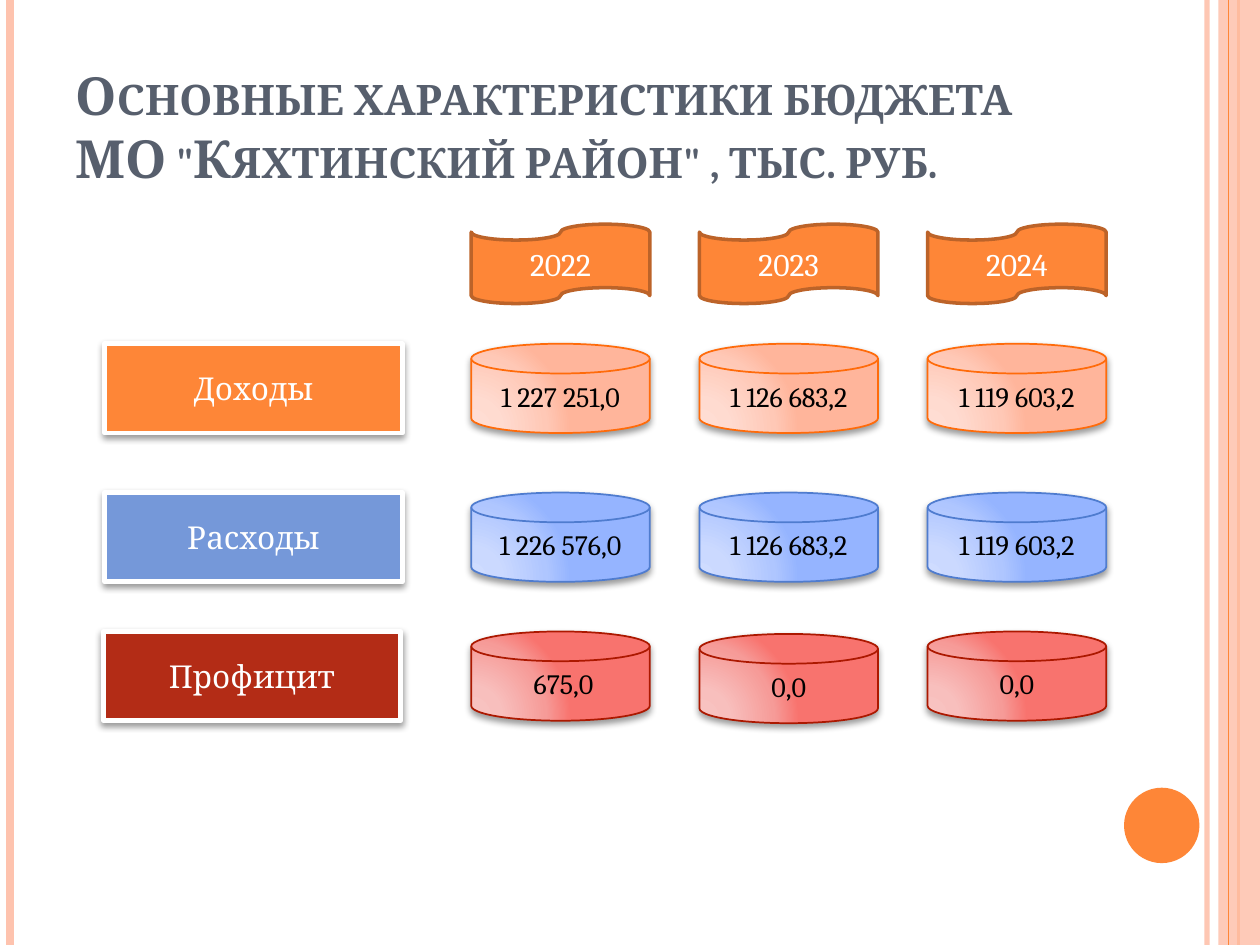
"""Build the budget summary slide of the district."""
from pptx import Presentation, dml, oxml
from pptx import util as u
from pptx.dml import color
from pptx.enum import shapes, text
from pptx.oxml import ns

HUES = {"orange": "FE8637", "blue": "7598D9", "red": "B32C16", "peach": "FEC3AE",
        "brown": "BC6329", "slate": "575F6D", "white": "FFFFFF", "black": "000000"}
YEARS = ["2022", "2023", "2024"]
ROWS = [
    ("Доходы", "orange", 2.11, 6.93, "FF6B0A", ["FFDED5", "FFDBD0", "FFC8B6", "FFB59B"],
     [("1 227 251,0", 0), ("1 126 683,2", 0), ("1 119 603,2", 0)]),
    ("Расходы", "blue", 2.11, 9.93, "4F7CCF", ["CFDCFF", "CBD9FF", "AFC6FF", "95B4FF"],
     [("1 226 576,0", 0), ("1 126 683,2", 0), ("1 119 603,2", 0)]),
    ("Профицит", "red", 2.08, 12.73, "AC1800", ["F8C5C3", "F8BFBD", "F69B98", "F8736E"],
     [(" 675,0", 0), ("0,0", 0.05), ("0,0", 0)]),
]
LEFT, STEP, WIDE, HIGH = 9.5, 4.6, 3.6, 1.8
KIND = shapes.MSO_SHAPE


def tint(name):
    """Return the colour for a name or a hex string."""
    return color.RGBColor.from_string(HUES.get(name, name))


def fade(fill, part):
    """Make a solid fill part opaque, in percent."""
    for hue in fill.iter(ns.qn("a:srgbClr")):
        oxml.xmlchemy.OxmlElement("a:alpha")
        hue.append(oxml.parse_xml(f'<a:alpha {ns.nsdecls("a")} val="{part * 1000}"/>'))


def write(frame, words, size=18, hue="white", bold=False, small=False,
          align=text.PP_ALIGN.CENTER, anchor=text.MSO_ANCHOR.MIDDLE):
    """Put formatted words in a text frame."""
    frame.word_wrap = True
    frame.auto_size = text.MSO_AUTO_SIZE.NONE
    frame.vertical_anchor = anchor
    para = frame.paragraphs[0]
    para.alignment = align
    run = para.add_run()
    run.text = words
    font = run.font
    font.name, font.size, font.bold = "Cambria", u.Pt(size), bold
    font.color.rgb = tint(hue)
    if small:
        run._r.get_or_add_rPr().set("cap", "small")


class Deck:
    """Hold the style and the current slide."""

    def __init__(self):
        """Open a title-only slide."""
        self.show = Presentation()
        self.show.slide_width, self.show.slide_height = u.Cm(25.4), u.Cm(19.05)
        self.slide = self.show.slides.add_slide(self.show.slide_layouts[5])
        self.items = self.slide.shapes

    def title(self, words, x, y, w, h):
        """Place the title above the frame lines."""
        box = self.items.title
        box.left, box.top, box.width, box.height = map(u.Cm, (x, y, w, h))
        write(box.text_frame, words, size=30, hue="slate", bold=True, small=True,
              align=text.PP_ALIGN.LEFT, anchor=text.MSO_ANCHOR.BOTTOM)
        self.items._spTree.append(box._element)

    def rule(self, x, hue, width, part=100):
        """Draw a line down the whole slide."""
        line = self.items.add_connector(shapes.MSO_CONNECTOR.STRAIGHT, u.Cm(x), 0,
                                        u.Cm(x), self.show.slide_height)
        line.line.color.rgb, line.line.width = tint(hue), u.Pt(width)
        props = line._element.spPr
        if part < 100:
            fade(props, part)
        props.append(oxml.parse_xml(f'<a:effectLst {ns.nsdecls("a")}/>'))

    def shape(self, kind, x, y, w, h, fill=None, edge=None, width=1, part=100):
        """Add a flat shape."""
        item = self.items.add_shape(kind, *map(u.Cm, (x, y, w, h)))
        item.shadow.inherit = False
        if fill:
            item.fill.solid()
            item.fill.fore_color.rgb = tint(fill)
            if part < 100:
                fade(item._element.spPr, part)
        if edge:
            item.line.color.rgb, item.line.width = tint(edge), u.Pt(width)
        else:
            item.line.fill.background()
        return item

    def shade(self, item):
        """Drop a soft shadow below a shape."""
        effects = item._element.spPr.find(ns.qn("a:effectLst"))
        effects.append(oxml.parse_xml(
            f'<a:outerShdw {ns.nsdecls("a")} blurRad="{u.Pt(4)}" dist="{u.Pt(2)}" '
            'dir="5400000" rotWithShape="0"><a:srgbClr val="000000">'
            '<a:alpha val="40000"/></a:srgbClr></a:outerShdw>'))

    def label(self, words, x, y, fill):
        """Add the name of a row."""
        item = self.shape(KIND.FLOWCHART_PROCESS, x, y, 6, HIGH, fill, "white", 2.75)
        self.shade(item)
        write(item.text_frame, words)

    def flag(self, words, x):
        """Add a year heading."""
        item = self.shape(KIND.FLOWCHART_PUNCHED_TAPE, x, 4.52, WIDE, 1.6,
                          "orange", "brown", 2)
        write(item.text_frame, words)

    def disk(self, words, x, y, edge, tones):
        """Add a value on a disk with a radial gradient."""
        item = self.shape(KIND.FLOWCHART_MAGNETIC_DISK, x, y, WIDE, HIGH, edge=edge)
        stops = "".join(f'<a:gs pos="{pos * 1000}"><a:srgbClr val="{tone}"/></a:gs>'
                        for pos, tone in zip((0, 30, 75, 100), tones))
        item._element.spPr.find(ns.qn("a:prstGeom")).addnext(oxml.parse_xml(
            f'<a:gradFill {ns.nsdecls("a")} rotWithShape="1"><a:gsLst>{stops}</a:gsLst>'
            '<a:path path="circle"><a:fillToRect l="5000" t="100000" r="120000" '
            'b="10000"/></a:path></a:gradFill>'))
        self.shade(item)
        write(item.text_frame, words, size=16, hue="black")


def main():
    """Build and save the slide."""
    deck = Deck()
    deck.rule(24.33, "peach", 3, 93)
    deck.rule(0.2, "peach", 4.5)
    deck.rule(24.97, "orange", 1.5)
    deck.shape(KIND.RECTANGLE, 24.56, 0, 0.84, 19.05, "peach", part=87)
    deck.rule(24.77, "orange", 0.75)
    deck.shape(KIND.OVAL, 22.66, 15.88, 1.52, 1.52, "orange")
    deck.title('Основные характеристики бюджета МО "Кяхтинский район" , тыс. руб.',
               1.27, 0.76, 20.75, 3.18)
    for name, fill, x, y, *_ in ROWS:
        deck.label(name, x, y, fill)
    for col, year in enumerate(YEARS):
        deck.flag(year, LEFT + col * STEP)
    for _, _, _, y, edge, tones, cells in ROWS:
        for col, (value, drop) in enumerate(cells):
            deck.disk(value, LEFT + col * STEP, y + drop, edge, tones)
    deck.show.save("out.pptx")


if __name__ == "__main__":
    main()
